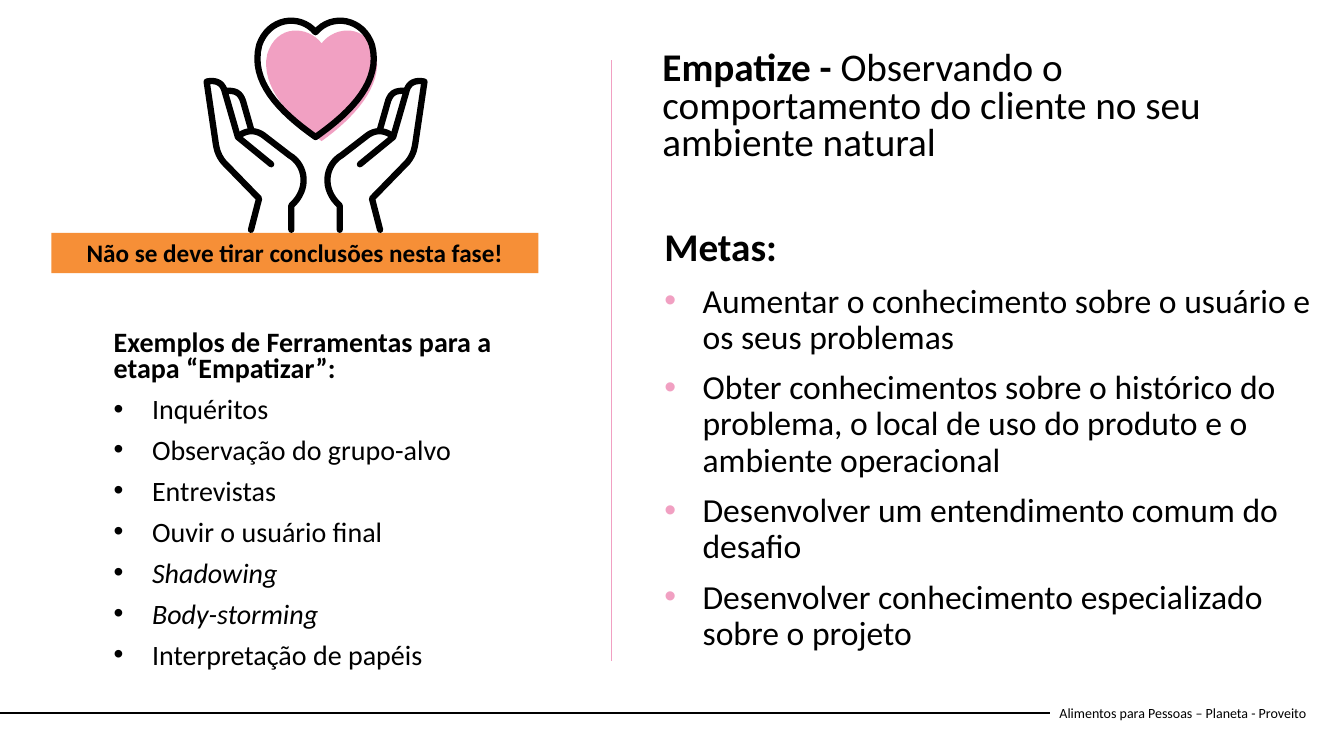
import dataclasses

import lxml.etree
import pptx
import pptx.dml.color
import pptx.enum.shapes
import pptx.enum.text
import pptx.oxml.ns
import pptx.util

Inches = pptx.util.Inches
Pt = pptx.util.Pt
qn = pptx.oxml.ns.qn
PP_ALIGN = pptx.enum.text.PP_ALIGN
MSO_ANCHOR = pptx.enum.text.MSO_ANCHOR
MSO_AUTO_SIZE = pptx.enum.text.MSO_AUTO_SIZE


@dataclasses.dataclass(frozen=True)
class Theme:
    font: str = "Calibri"
    black: str = "000000"
    pink: str = "F1A0C2"
    orange: str = "F68F37"
    heading: int = 28
    goal: int = 24
    tool: int = 20
    banner: int = 18
    footer: int = 10
    before: int = 10
    hanging: float = 0.38
    hairline: float = 0.5
    rule: float = 1.5
    stroke: float = 4.5


def rgb(color):
    return pptx.dml.color.RGBColor.from_string(color)


def trace(start, *steps):
    points = [start]
    for step in steps:
        if len(step) == 1:
            points.append(step[0])
            continue
        curve = (points[-1], *step)
        for i in range(1, 17):
            t = i / 16
            weights = ((1 - t) ** 3, 3 * t * (1 - t) ** 2, 3 * t * t * (1 - t), t ** 3)
            points.append(tuple(sum(w * p[k] for w, p in zip(weights, curve)) for k in (0, 1)))
    return points


def mirror(points, axis):
    return [(2 * axis - x, y) for x, y in points]


class Deck:
    def __init__(self, theme):
        self.theme = theme
        self.prs = pptx.Presentation()
        self.prs.slide_width, self.prs.slide_height = Inches(13.33), Inches(7.5)
        self.slide = self.prs.slides.add_slide(self.prs.slide_layouts[5])
        self.shapes = self.slide.shapes

    def frame(self, sp, anchor=MSO_ANCHOR.TOP, auto_size=MSO_AUTO_SIZE.NONE):
        tf = sp.text_frame
        tf.word_wrap = True
        tf.vertical_anchor = anchor
        tf.auto_size = auto_size
        return tf

    def run(self, p, text, size, bold=False, italic=False):
        r = p.add_run()
        r.text = text
        r.font.name, r.font.size = self.theme.font, Pt(size)
        r.font.bold, r.font.italic = bold, italic
        r.font.color.rgb = rgb(self.theme.black)

    def spacing(self, p, lines):
        p.alignment = PP_ALIGN.LEFT
        p.line_spacing = lines
        p.space_before = Pt(self.theme.before)

    def bullet(self, p, color):
        pPr = p._p.get_or_add_pPr()
        indent = Inches(self.theme.hanging)
        pPr.set("marL", str(indent))
        pPr.set("indent", str(-indent))
        clr = lxml.etree.SubElement(pPr, qn("a:buClr"))
        lxml.etree.SubElement(clr, qn("a:srgbClr")).set("val", color)
        lxml.etree.SubElement(pPr, qn("a:buFont")).set("typeface", "Arial")
        lxml.etree.SubElement(pPr, qn("a:buChar")).set("char", "•")

    def title(self, box, lead, rest):
        sp = self.shapes.title
        sp.left, sp.top, sp.width, sp.height = map(Inches, box)
        p = self.frame(sp).paragraphs[0]
        self.spacing(p, 0.8)
        self.run(p, lead, self.theme.heading, bold=True)
        self.run(p, rest, self.theme.heading)

    def bullets(self, box, heading, heading_size, items, size, lines, color, italics=()):
        tf = self.frame(self.shapes.add_textbox(*map(Inches, box)))
        p = tf.paragraphs[0]
        self.spacing(p, lines)
        self.run(p, heading, heading_size, bold=True)
        for item in items:
            p = tf.add_paragraph()
            self.spacing(p, lines)
            self.bullet(p, color)
            self.run(p, item, size, italic=item in italics)

    def banner(self, box, text):
        sp = self.shapes.add_shape(
            pptx.enum.shapes.MSO_SHAPE.RECTANGLE, *map(Inches, box))
        sp.shadow.inherit = False
        sp.fill.solid()
        sp.fill.fore_color.rgb = rgb(self.theme.orange)
        sp.line.fill.background()
        tf = self.frame(sp, auto_size=MSO_AUTO_SIZE.SHAPE_TO_FIT_TEXT)
        p = tf.paragraphs[0]
        p.alignment = PP_ALIGN.CENTER
        self.run(p, text, self.theme.banner, bold=True)

    def line(self, start, end, color, width):
        cx = self.shapes.add_connector(
            pptx.enum.shapes.MSO_CONNECTOR.STRAIGHT, *map(Inches, start + end))
        cx.line.color.rgb = rgb(color)
        cx.line.width = Pt(width)
        lxml.etree.SubElement(cx._element.spPr, qn("a:effectLst"))
        return cx

    def footer(self, box, text):
        sp = self.shapes.add_textbox(*map(Inches, box))
        p = self.frame(sp, MSO_ANCHOR.MIDDLE).paragraphs[0]
        self.run(p, text, self.theme.footer)
        middle = box[1] + box[3] / 2
        cx = self.line((0, middle), (box[0], middle), self.theme.black, self.theme.rule)
        cx.end_connect(sp, 1)

    def outline(self, shapes, points, fill=None, closed=False):
        points = [(Inches(x), Inches(y)) for x, y in points]
        builder = shapes.build_freeform(*points[0])
        builder.add_line_segments(points[1:], close=closed)
        sp = builder.convert_to_shape()
        sp.shadow.inherit = False
        if fill:
            sp.fill.solid()
            sp.fill.fore_color.rgb = rgb(fill)
            sp.line.fill.background()
            return
        sp.fill.background()
        sp.line.color.rgb = rgb(self.theme.black)
        sp.line.width = Pt(self.theme.stroke)
        ln = sp.line._get_or_add_ln()
        ln.set("cap", "rnd")
        lxml.etree.SubElement(ln, qn("a:round"))

    def heart_in_hands(self, axis):
        shapes = self.shapes.add_group_shape().shapes
        pink_axis = axis + 0.06
        pink = trace((pink_axis, 0.43), ((3.33, 0.25), (3.64, 0.24), (3.73, 0.54)),
                     ((3.8, 0.86), (3.5, 1.18), (pink_axis, 1.4)))
        heart = trace((axis, 0.32), ((3.29, 0.13), (3.6, 0.18), (3.69, 0.45)),
                      ((3.78, 0.8), (3.5, 1.1), (axis, 1.36)))
        palm = trace((3.37, 2.28), ((3.37, 2.04),),
                     ((3.19, 1.88), (3.22, 1.64), (3.39, 1.54)), ((3.65, 1.34),),
                     ((3.74, 1.28), (3.82, 1.3), (3.88, 1.34)))
        back = trace((3.77, 2.28), ((3.69, 1.97),), ((4.04, 1.61),),
                     ((4.09, 1.55), (4.11, 1.49), (4.12, 1.42)), ((4.21, 0.81),),
                     ((4.12, 0.79), (4.05, 0.82), (4.03, 0.91)),
                     ((3.9, 1.36),), ((3.57, 1.63),))
        finger = trace((3.77, 1.28), ((3.85, 1.0),),
                       ((3.88, 0.92), (3.92, 0.9), (4.01, 0.9)))
        self.outline(shapes, pink + mirror(pink, pink_axis)[-2:0:-1], self.theme.pink, True)
        for part in (palm, back, finger):
            self.outline(shapes, part)
            self.outline(shapes, mirror(part, axis))
        self.outline(shapes, heart + mirror(heart, axis)[-2:0:-1], closed=True)


def main():
    theme = Theme()
    deck = Deck(theme)
    deck.footer((10.41, 6.87, 2.73, 0.4), "Alimentos para Pessoas – Planeta - Proveito")
    deck.bullets((6.49, 2.21, 6.62, 4.07), "Metas:", theme.heading, (
        "Aumentar o conhecimento sobre o usuário e os seus problemas",
        "Obter conhecimentos sobre o histórico do problema, o local de uso do produto "
        "e o ambiente operacional",
        "Desenvolver um entendimento comum do desafio",
        "Desenvolver conhecimento especializado sobre o projeto",
    ), theme.goal, 0.9, theme.pink)
    deck.title((6.47, 0.46, 6.52, 1.25), "Empatize - ",
               "Observando o comportamento do cliente no seu ambiente natural")
    deck.bullets((1.03, 3.23, 4.2, 3.76),
                 "Exemplos de Ferramentas para a etapa “Empatizar”:", theme.tool, (
        "Inquéritos", "Observação do grupo-alvo", "Entrevistas", "Ouvir o usuário final",
        "Shadowing", "Body-storming", "Interpretação de papéis",
    ), theme.tool, 0.8, theme.black, italics=("Shadowing", "Body-storming"))
    deck.banner((0.51, 2.31, 4.83, 0.4), "Não se deve tirar conclusões nesta fase!")
    deck.heart_in_hands(3.13)
    deck.line((6.06, 0.6), (6.06, 6.56), theme.pink, theme.hairline)
    deck.prs.save("out.pptx")


if __name__ == "__main__":
    main()
